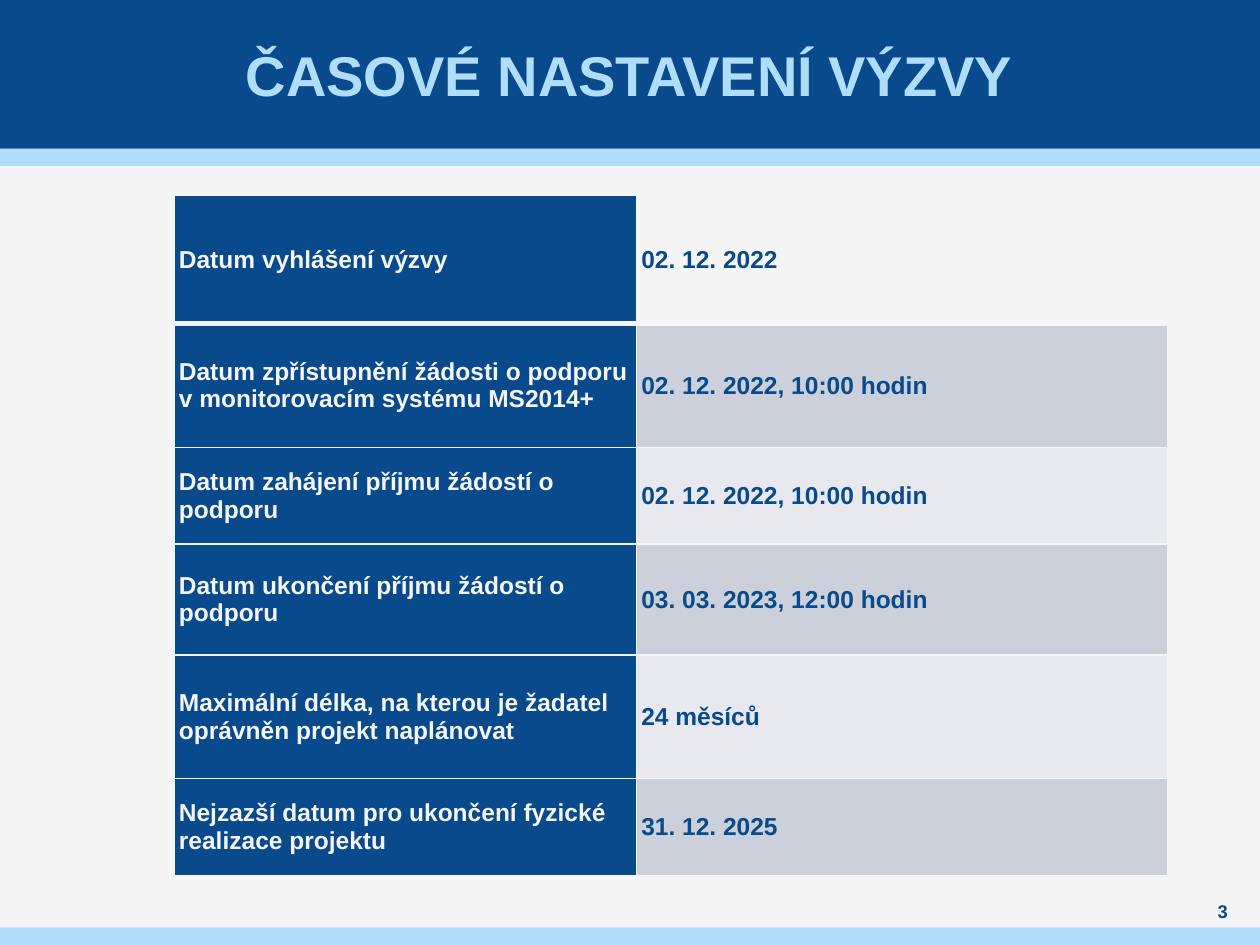
from lxml.etree import SubElement
from pptx import Presentation
from pptx.dml.color import RGBColor
from pptx.enum.shapes import MSO_SHAPE
from pptx.enum.text import MSO_ANCHOR, PP_ALIGN
from pptx.oxml.ns import qn
from pptx.util import Inches, Pt

HUES = {"navy": "084A8B", "sky": "AFDDFA", "paper": "F5F5F5",
        "dark": "CCD0DA", "light": "E7E9EE"}


def style(para, size, hue):
    for run in para.runs:
        run.font.name = "Arial"
        run.font.size = Pt(size)
        run.font.bold = True
        run.font.color.rgb = RGBColor.from_string(HUES[hue])


def edge(cell, side, width):
    line = SubElement(cell._tc.get_or_add_tcPr(), qn(f"a:ln{side}"), w=str(Pt(width)))
    fill = SubElement(line, qn("a:solidFill"))
    SubElement(fill, qn("a:srgbClr"), val=HUES["paper"])


deck = Presentation()
deck.slide_width, deck.slide_height = Inches(10), Inches(7.5)
slide = deck.slides.add_slide(deck.slide_layouts[5])
slide.background.fill.solid()
slide.background.fill.fore_color.rgb = RGBColor.from_string(HUES["paper"])

for top, height, hue in [(1.18, 0.14, "sky"), (0, 1.18, "navy"), (7.36, 0.14, "sky")]:
    bar = slide.shapes.add_shape(MSO_SHAPE.RECTANGLE, 0, Inches(top), Inches(10), Inches(height))
    bar.shadow.inherit = False
    bar.fill.solid()
    bar.fill.fore_color.rgb = RGBColor.from_string(HUES[hue])
    bar.line.fill.background()

title = slide.shapes.title
title._element.getparent().append(title._element)
title.left, title.top = Inches(0.39), Inches(0)
title.width, title.height = Inches(9.21), Inches(1.18)
frame = title.text_frame
frame.text = "ČASOVÉ NASTAVENÍ VÝZVY"
frame.vertical_anchor = MSO_ANCHOR.MIDDLE
frame.margin_left = frame.margin_right = Inches(0.04)
frame.margin_top = frame.margin_bottom = 0
frame.paragraphs[0].alignment = PP_ALIGN.CENTER
style(frame.paragraphs[0], 32, "sky")

page = slide.shapes.add_textbox(Inches(9.45), Inches(7.13), Inches(0.51), Inches(0.2))
frame = page.text_frame
frame.text = "3"
frame.word_wrap = True
frame.vertical_anchor = MSO_ANCHOR.MIDDLE
frame.margin_left = frame.margin_right = frame.margin_top = frame.margin_bottom = 0
frame.paragraphs[0].alignment = PP_ALIGN.CENTER
style(frame.paragraphs[0], 10.5, "navy")

dates = [
    ("Datum vyhlášení výzvy", "02. 12. 2022", 1.02),
    ("Datum zpřístupnění žádosti o podporu v monitorovacím systému MS2014+",
     "02. 12. 2022, 10:00 hodin", 0.98),
    ("Datum zahájení příjmu žádostí o podporu", "02. 12. 2022, 10:00 hodin", 0.77),
    ("Datum ukončení příjmu žádostí o podporu", "03. 03. 2023, 12:00 hodin", 0.88),
    ("Maximální délka, na kterou je žadatel oprávněn projekt naplánovat", "24 měsíců", 0.98),
    ("Nejzazší datum pro ukončení fyzické realizace projektu", "31. 12. 2025", 0.77),
]
table = slide.shapes.add_table(len(dates), 2, Inches(1.38), Inches(1.55),
                               Inches(7.89), Inches(5.41)).table
table.columns[0].width, table.columns[1].width = Inches(3.67), Inches(4.22)

for row, (label, value, height) in enumerate(dates):
    table.rows[row].height = Inches(height)
    band = "paper" if row == 0 else "dark" if row % 2 else "light"
    for col, (text, ink, hue) in enumerate([(label, "paper", "navy"), (value, "navy", band)]):
        cell = table.cell(row, col)
        for side in "LRTB":
            thick = (row, side) in [(0, "B"), (1, "T")]
            edge(cell, side, 3 if thick else 1)
        cell.fill.solid()
        cell.fill.fore_color.rgb = RGBColor.from_string(HUES[hue])
        cell.vertical_anchor = MSO_ANCHOR.MIDDLE
        cell.margin_left = Inches(0.04)
        cell.margin_right = cell.margin_top = cell.margin_bottom = 0
        cell.text_frame.text = text
        para = cell.text_frame.paragraphs[0]
        para.space_before = para.space_after = Pt(3)
        style(para, 14, ink)

deck.save("out.pptx")
